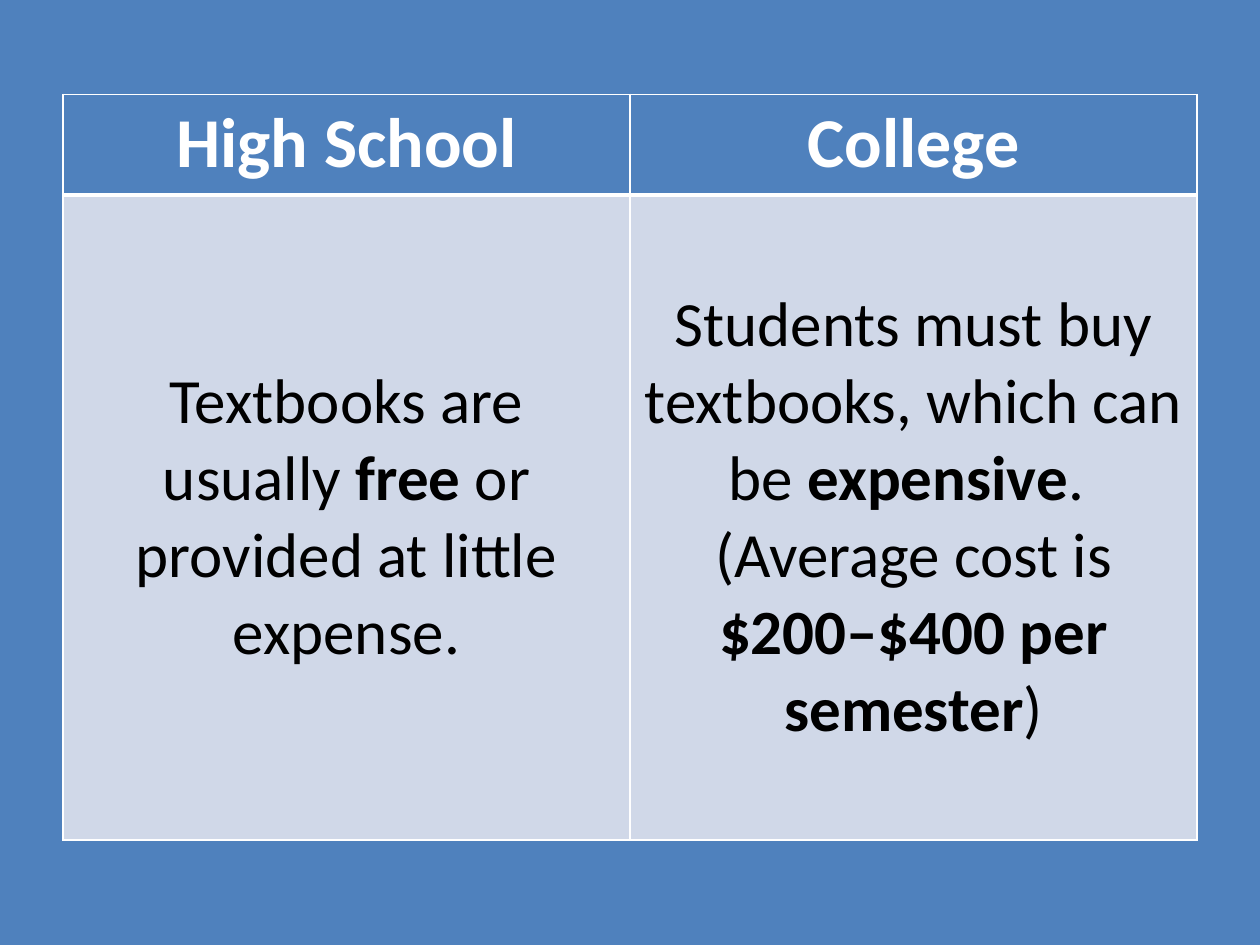
from lxml import etree
from pptx import Presentation
from pptx.dml.color import RGBColor
from pptx.enum.text import MSO_ANCHOR, PP_ALIGN
from pptx.oxml.ns import qn
from pptx.util import Cm, Pt

CENTER = PP_ALIGN.CENTER
TOP = MSO_ANCHOR.TOP
MIDDLE = MSO_ANCHOR.MIDDLE

BLUE = RGBColor(0x4F, 0x81, 0xBD)
PALE = RGBColor(0xD0, 0xD8, 0xE8)
WHITE = RGBColor(0xFF, 0xFF, 0xFF)
BLACK = RGBColor(0x00, 0x00, 0x00)

HEADER = {"size": Pt(40), "color": WHITE, "fill": BLUE, "anchor": TOP,
          "borders": {"lnL": 1, "lnR": 1, "lnT": 1, "lnB": 3}}
BODY = {"size": Pt(36), "color": BLACK, "fill": PALE, "anchor": MIDDLE,
        "borders": {"lnL": 1, "lnR": 1, "lnT": 3, "lnB": 1}}

HEADINGS = [
    [[("High School", True)]],
    [[("College", True)]],
]
TEXTBOOK_COSTS = [
    [[("Textbooks are usually ", False), ("free", True),
      (" or provided at little expense.", False)]],
    [[("Students must buy textbooks, which can be ", False),
      ("expensive", True), (". ", False)],
     [("(Average cost is ", False), ("$200–$400 per semester", True),
      (")", False)]],
]


class SlideBuilder:
    font_name = "Calibri"

    def __init__(self, slide):
        self.slide = slide

    def background(self, color):
        fill = self.slide.background.fill
        fill.solid()
        fill.fore_color.rgb = color

    def table(self, left, top, column_widths, row_heights, rows):
        frame = self.slide.shapes.add_table(
            len(row_heights), len(column_widths), left, top,
            sum(column_widths), sum(row_heights))
        table = frame.table
        for column, width in zip(table.columns, column_widths):
            column.width = width
        for row, height, (style, contents) in zip(table.rows, row_heights, rows):
            row.height = height
            for cell, paragraphs in zip(row.cells, contents):
                self.cell(cell, paragraphs, style)

    def cell(self, cell, paragraphs, style):
        self.borders(cell, style["borders"])
        cell.fill.solid()
        cell.fill.fore_color.rgb = style["fill"]
        cell.vertical_anchor = style["anchor"]
        text_frame = cell.text_frame
        for index, runs in enumerate(paragraphs):
            paragraph = text_frame.add_paragraph() if index else text_frame.paragraphs[0]
            paragraph.alignment = CENTER
            for text, bold in runs:
                run = paragraph.add_run()
                run.text = text
                font_format = {"name": self.font_name, "size": style["size"], "bold": bold}
                for attribute, value in font_format.items():
                    setattr(run.font, attribute, value)
                run.font.color.rgb = style["color"]

    def borders(self, cell, widths):
        properties = cell._tc.get_or_add_tcPr()
        for side, width in widths.items():
            line = etree.SubElement(properties, qn(f"a:{side}"), w=str(Pt(width)))
            fill = etree.SubElement(line, qn("a:solidFill"))
            etree.SubElement(fill, qn("a:srgbClr"), val=str(WHITE))


def main():
    presentation = Presentation()
    presentation.slide_width = Cm(25.4)
    presentation.slide_height = Cm(19.05)
    builder = SlideBuilder(presentation.slides.add_slide(presentation.slide_layouts[6]))
    builder.background(BLUE)
    builder.table(Cm(1.27), Cm(1.9), [Cm(11.43)] * 2, [Cm(2.03), Cm(13)],
                  [(HEADER, HEADINGS), (BODY, TEXTBOOK_COSTS)])
    presentation.save("out.pptx")


if __name__ == "__main__":
    main()
